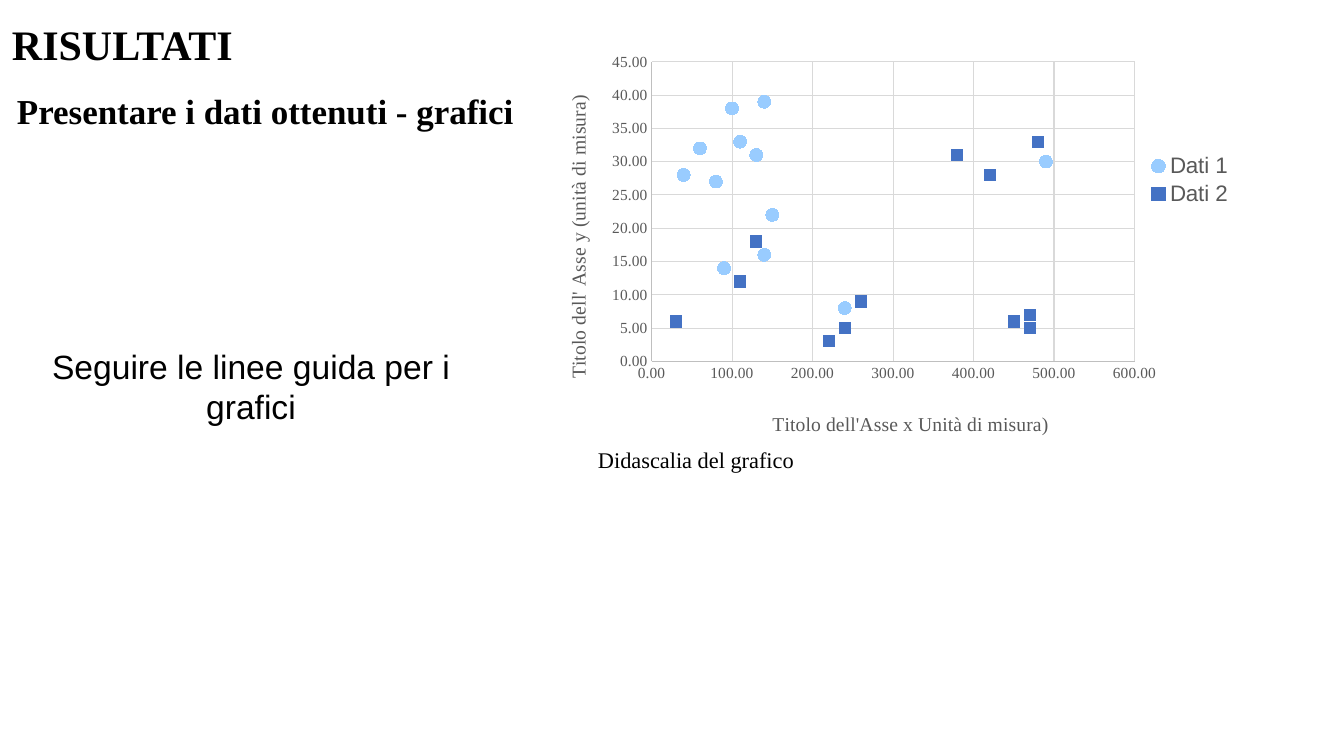
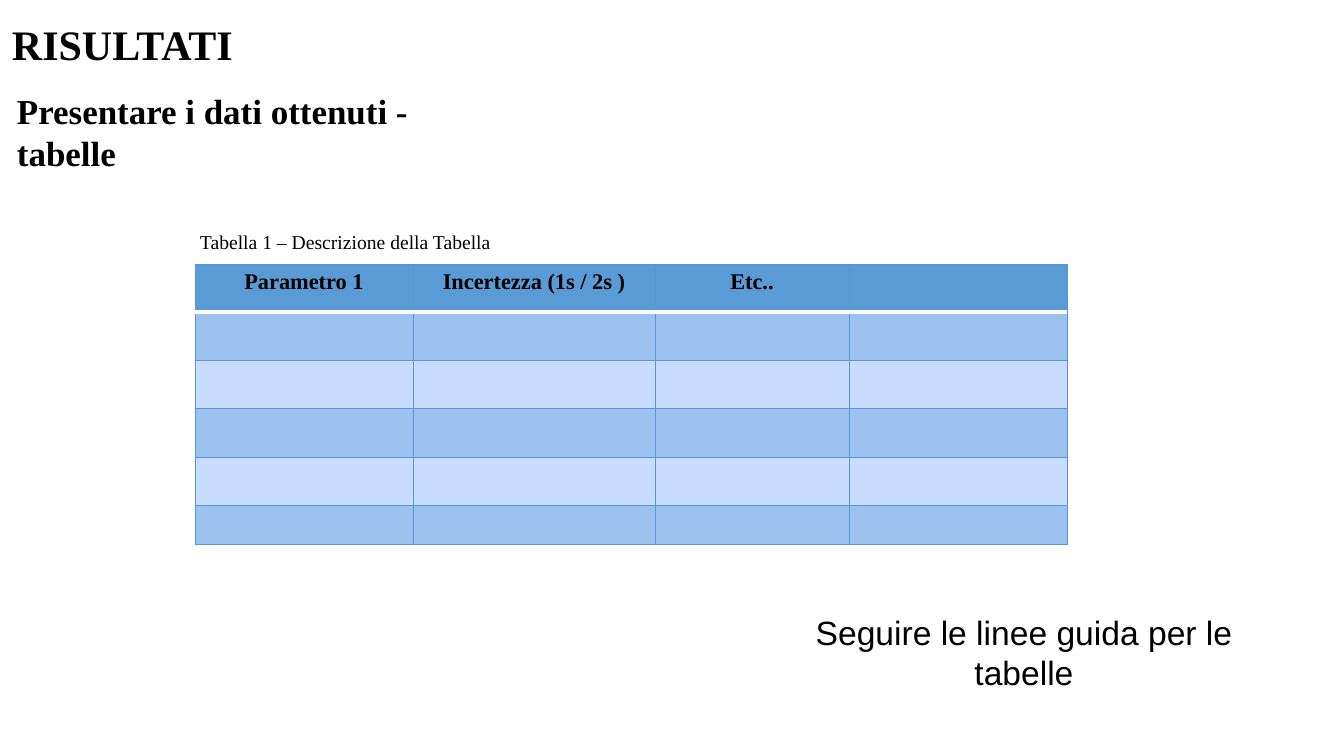
import pptx
import pptx.chart.data
import pptx.dml.color
import pptx.enum.chart
import pptx.enum.text
import pptx.oxml
import pptx.oxml.ns
import pptx.util

PX = 914400 / 100.8
SERIF, SANS = "Times New Roman", "Arial"
COLORS = {
    "text": "000000", "muted": "595959", "axis": "BFBFBF", "grid": "D9D9D9",
    "dati1": "99CCFF", "dati2": "4472C4", "head": "5B9BD5",
    "dark": "9DC1EE", "light": "C8DCFF", "border": "5698D3", "white": "FFFFFF",
}
RGB = {k: pptx.dml.color.RGBColor.from_string(v) for k, v in COLORS.items()}
CENTER = pptx.enum.text.PP_ALIGN.CENTER


def px(*values):
    return [pptx.util.Emu(round(v * PX)) for v in values]


def style(font, size, name=SERIF, color="text", bold=False):
    font.size = pptx.util.Pt(size)
    font.name = name
    font.bold = bold
    font.color.rgb = RGB[color]


prs = pptx.Presentation()
prs.slide_width, prs.slide_height = px(1344, 756)
slides = [prs.slides.add_slide(prs.slide_layouts[6]) for _ in range(2)]

title = ("RISULTATI", 2, 14, 646, 61, 5, 30, SERIF, True, None)
texts = [
    [
        title,
        ("Presentare i dati ottenuti - grafici", 7, 85, 519, 95, 5, 25, SERIF, True, None),
        ("Seguire le linee guida per i grafici", 0, 341, 502, 92, 5, 24, SANS, False, CENTER),
        ("Didascalia del grafico", 588, 436, 716, 47, 10, 16, SERIF, False, None),
    ],
    [
        title,
        ("Presentare i dati ottenuti - tabelle", 7, 85, 517, 95, 5, 25, SERIF, True, None),
        ("Seguire le linee guida per le tabelle", 773, 607, 502, 92, 5, 24, SANS, False, CENTER),
        ("Tabella 1 – Descrizione della Tabella", 190, 220, 716, 44, 10, 14, SERIF, False, None),
    ],
]
for s, boxes in zip(slides, texts):
    for text, x, y, w, h, inset, size, font, bold, align in boxes:
        sp = s.shapes.add_textbox(*px(x, y, w, h))
        tf = sp.text_frame
        tf.word_wrap = True
        tf.margin_left, tf.margin_right, tf.margin_top, tf.margin_bottom = px(10, 10, inset, inset)
        tf.text = text
        p = tf.paragraphs[0]
        p.alignment = align
        style(p.runs[0].font, size, font, bold=bold)

points = {
    "Dati 1": [(40, 28), (140, 39), (60, 32), (490, 30), (150, 22), (90, 14),
               (110, 33), (140, 16), (100, 38), (80, 27), (240, 8), (130, 31)],
    "Dati 2": [(220, 3), (260, 9), (470, 7), (240, 5), (480, 33), (470, 5),
               (380, 31), (420, 28), (110, 12), (450, 6), (30, 6), (130, 18)],
}
data = pptx.chart.data.XyChartData(number_format="0.00")
for name, pairs in points.items():
    series = data.add_series(name)
    for x, y in pairs:
        series.add_data_point(x, y)
chart = slides[0].shapes.add_chart(
    pptx.enum.chart.XL_CHART_TYPE.XY_SCATTER, *px(555, 45, 690, 422), data).chart
style(chart.font, 10, SANS)
chart.has_title = False
chart.has_legend = True
legend = chart.legend
legend.position = pptx.enum.chart.XL_LEGEND_POSITION.RIGHT
legend.include_in_layout = False
style(legend.font, 16, SANS, "muted")

MARKER = pptx.enum.chart.XL_MARKER_STYLE
for series, shape, size, color in zip(
        chart.plots[0].series, (MARKER.CIRCLE, MARKER.SQUARE), (9, 8), ("dati1", "dati2")):
    series.smooth = False
    series.format.line.fill.background()
    marker = series.marker
    marker.style, marker.size = shape, size
    marker.format.fill.solid()
    marker.format.fill.fore_color.rgb = RGB[color]
    marker.format.line.fill.background()

for axis, label, top, step in (
        (chart.category_axis, "Titolo dell'Asse x Unità di misura)", 600, 100),
        (chart.value_axis, "Titolo dell' Asse y (unità di misura)", 45, 5)):
    axis.minimum_scale, axis.maximum_scale, axis.major_unit = 0, top, step
    axis.major_tick_mark = axis.minor_tick_mark = pptx.enum.chart.XL_TICK_MARK.NONE
    axis.tick_labels.number_format = "0.00"
    axis.tick_labels.number_format_is_linked = False
    style(axis.tick_labels.font, 11, color="muted")
    axis.has_major_gridlines = True
    for line, color in ((axis.format.line, "axis"), (axis.major_gridlines.format.line, "grid")):
        line.width = pptx.util.Pt(0.75)
        line.color.rgb = RGB[color]
    tf = axis.axis_title.text_frame
    tf.text = label
    style(tf.paragraphs[0].runs[0].font, 14, color="muted")

plot_area = chart.plots[0]._element.getparent()
layouts = [
    (plot_area, 0, {"layoutTarget": "inner", "xMode": "edge", "yMode": "edge",
                    "x": 0.14, "y": 0.04, "w": 0.7, "h": 0.71}),
    (legend._element, 1, {"xMode": "edge", "yMode": "edge",
                          "x": 0.86, "y": 0.25, "w": 0.12, "h": 0.14}),
    (chart.category_axis.axis_title._element, 1,
     {"xMode": "edge", "yMode": "edge", "x": 0.31, "y": 0.86}),
    (chart.value_axis.axis_title._element, 1,
     {"xMode": "edge", "yMode": "edge", "x": 0.01, "y": 0.11}),
]
for parent, index, values in layouts:
    for old in parent.findall(pptx.oxml.ns.qn("c:layout")):
        parent.remove(old)
    items = "".join(f'<c:{k} val="{v}"/>' for k, v in values.items())
    parent.insert(index, pptx.oxml.parse_xml(
        f'<c:layout {pptx.oxml.ns.nsdecls("c")}><c:manualLayout>{items}</c:manualLayout></c:layout>'))

headers = ["Parametro 1", "Incertezza (1s / 2s )", "Etc..", ""]
widths = [218, 242, 194, 218]
heights = [48, 49, 48, 49, 48, 39]
table = slides[1].shapes.add_table(
    len(heights), len(widths), *px(195, 264, sum(widths), sum(heights))).table
for column, width in zip(table.columns, px(*widths)):
    column.width = width
for i, (row, height) in enumerate(zip(table.rows, px(*heights))):
    row.height = height
    for j, cell in enumerate(row.cells):
        tcPr = cell._tc.get_or_add_tcPr()
        for side in "LRTB":
            rule = (i, side) in ((0, "B"), (1, "T"))
            color, width = ("white", 3) if rule else ("border", 0.75)
            tcPr.append(pptx.oxml.parse_xml(
                f'<a:ln{side} {pptx.oxml.ns.nsdecls("a")} w="{pptx.util.Pt(width)}"><a:solidFill>'
                f'<a:srgbClr val="{COLORS[color]}"/></a:solidFill></a:ln{side}>'))
        cell.fill.solid()
        cell.fill.fore_color.rgb = RGB["head" if i == 0 else "dark" if i % 2 else "light"]
        p = cell.text_frame.paragraphs[0]
        if i == 0 and headers[j]:
            p.text = headers[j]
            p.alignment = CENTER
            style(p.runs[0].font, 16, bold=True)
        else:
            p._p.append(pptx.oxml.parse_xml(
                f'<a:endParaRPr {pptx.oxml.ns.nsdecls("a")} sz="1600"/>'))

prs.save("out.pptx")
